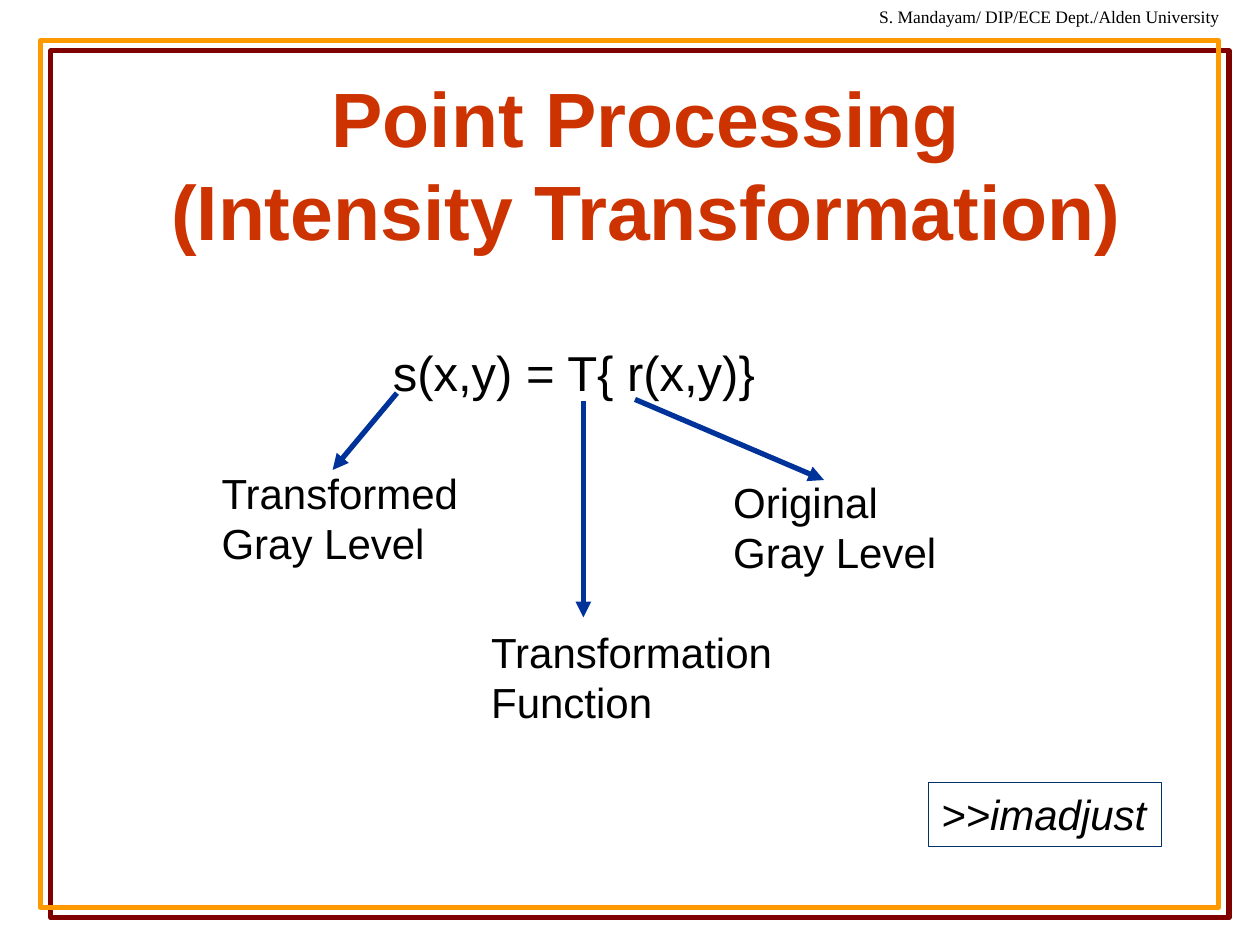
from dataclasses import dataclass
from typing import Any

from lxml.etree import SubElement
from pptx import Presentation
from pptx.dml.color import RGBColor
from pptx.enum.shapes import MSO_CONNECTOR, MSO_SHAPE
from pptx.enum.text import MSO_ANCHOR, MSO_AUTO_SIZE, PP_ALIGN
from pptx.oxml.ns import qn
from pptx.util import Inches, Pt

COLORS = {
    "title": "CC3300",
    "text": "000000",
    "frame": "FF9900",
    "frame_shadow": "800000",
    "arrow": "003399",
    "command_border": "003366",
}
COLUMNS, ROWS = 100, 75


def color(name):
    return RGBColor.from_string(COLORS[name])


@dataclass
class SlideBuilder:
    presentation: Any
    slide: Any
    font: str = "Arial"
    label_size: int = 24
    arrow_width: float = 3

    def place(self, column, row):
        return (
            round(self.presentation.slide_width * column / COLUMNS),
            round(self.presentation.slide_height * row / ROWS),
        )

    def box(self, column, row, columns, rows):
        return *self.place(column, row), *self.place(columns, rows)

    def style_run(self, run, size, font=None, bold=False, italic=False, fill="text"):
        run.font.name = font or self.font
        run.font.size = Pt(size)
        run.font.bold = bold
        run.font.italic = italic
        run.font.color.rgb = color(fill)

    def add_lines(self, shape, lines, size, **style):
        frame = shape.text_frame
        frame.word_wrap = False
        frame.auto_size = MSO_AUTO_SIZE.SHAPE_TO_FIT_TEXT
        frame.vertical_anchor = MSO_ANCHOR.TOP
        for index, line in enumerate(lines):
            paragraph = frame.add_paragraph() if index else frame.paragraphs[0]
            paragraph.alignment = PP_ALIGN.LEFT
            run = paragraph.add_run()
            run.text = line
            self.style_run(run, size, **style)

    def title(self, area, lines, size):
        shape = self.slide.shapes.title
        shape.left, shape.top, shape.width, shape.height = self.box(*area)
        frame = shape.text_frame
        frame.word_wrap = True
        frame.auto_size = MSO_AUTO_SIZE.NONE
        frame.vertical_anchor = MSO_ANCHOR.MIDDLE
        paragraph = frame.paragraphs[0]
        paragraph.alignment = PP_ALIGN.CENTER
        for index, line in enumerate(lines):
            if index:
                paragraph.add_line_break()
            run = paragraph.add_run()
            run.text = line
            self.style_run(run, size, bold=True, fill="title")

    def text(self, area, lines, size=None, **style):
        shape = self.slide.shapes.add_textbox(*self.box(*area))
        self.add_lines(shape, lines, size or self.label_size, **style)

    def outline(self, area, line, width):
        shape = self.slide.shapes.add_shape(MSO_SHAPE.RECTANGLE, *self.box(*area))
        shape.shadow.inherit = False
        shape.fill.background()
        shape.line.color.rgb = color(line)
        shape.line.width = Pt(width)
        return shape

    def frame(self, area):
        shape = self.outline(area, "frame", 3)
        effects = shape._element.spPr.find(qn("a:effectLst"))
        shadow = SubElement(
            effects, qn("a:outerShdw"), dist=str(Pt(8.5)), dir="2700000", algn="ctr", rotWithShape="0"
        )
        SubElement(shadow, qn("a:srgbClr"), val=COLORS["frame_shadow"])

    def command(self, area, line):
        shape = self.outline(area, "command_border", 0.75)
        self.add_lines(shape, [line], self.label_size, italic=True)

    def arrow(self, start, end):
        connector = self.slide.shapes.add_connector(
            MSO_CONNECTOR.STRAIGHT, *self.place(*start), *self.place(*end)
        )
        connector.line.color.rgb = color("arrow")
        connector.line.width = Pt(self.arrow_width)
        properties = connector._element.spPr
        SubElement(properties.find(qn("a:ln")), qn("a:tailEnd"), type="triangle")
        SubElement(properties, qn("a:effectLst"))


def main():
    presentation = Presentation()
    presentation.slide_width, presentation.slide_height = Inches(10), Inches(7.5)
    slide = presentation.slides.add_slide(presentation.slide_layouts[5])
    builder = SlideBuilder(presentation, slide)

    builder.frame((3.2, 3.2, 93.5, 68.8))
    builder.text(
        (68.8, 0, 29.7, 2.7),
        ["S. Mandayam/ DIP/ECE Dept./Alden University"],
        10,
        font="Times New Roman",
    )
    builder.title((7.5, 6.7, 87.6, 12.5), ["Point Processing", "(Intensity Transformation)"], 44)
    builder.text((30.2, 26.7, 30.9, 5.7), ["s(x,y) = T{ r(x,y)}"], 28)

    terms = [
        ((16.6, 36.6, 20.9, 9), ["Transformed", "Gray Level"], (31.5, 31.2), (26.4, 37.3)),
        ((38, 49.2, 24.4, 9), ["Transformation", "Function"], (46.3, 31.8), (46.3, 49)),
        ((57.2, 37.3, 18.1, 9), ["Original", "Gray Level"], (50.4, 31.7), (65.4, 38.1)),
    ]
    for area, lines, start, end in terms:
        builder.text(area, lines)
        builder.arrow(start, end)

    builder.command((73.7, 62.1, 18.5, 5.1), ">>imadjust")
    presentation.save("out.pptx")


if __name__ == "__main__":
    main()
